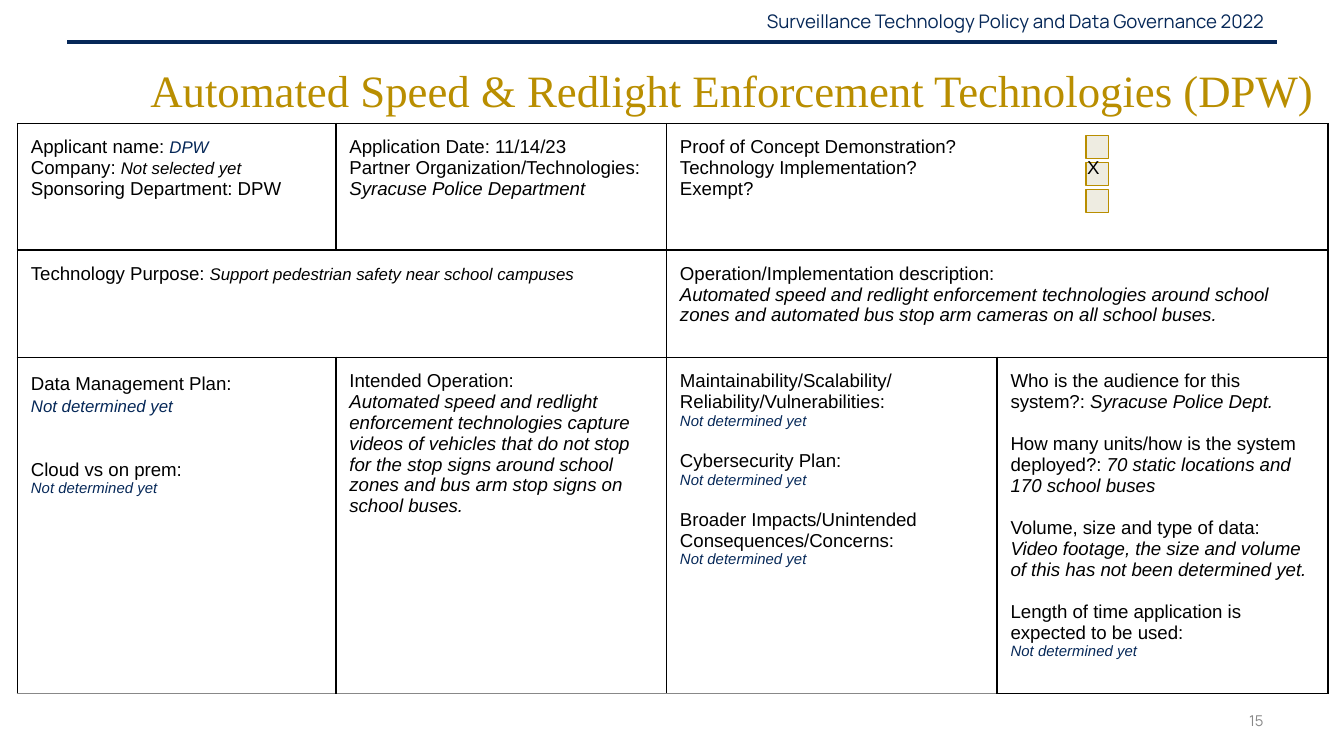
from lxml import etree
from pptx import Presentation
from pptx.dml.color import RGBColor
from pptx.enum.shapes import MSO_CONNECTOR, MSO_SHAPE
from pptx.enum.text import MSO_ANCHOR, PP_ALIGN
from pptx.oxml.ns import qn
from pptx.util import Inches, Pt

LINE = MSO_CONNECTOR.STRAIGHT
RECTANGLE = MSO_SHAPE.RECTANGLE
MIDDLE = MSO_ANCHOR.MIDDLE
RIGHT = PP_ALIGN.RIGHT

COLORS = {
    "navy": "062858",
    "gold": "B98E00",
    "cream": "EEECE1",
    "gray": "888888",
    "black": "000000",
}

# Text styles: size, colour, italic
LABEL = (10, "black", False)
ANSWER = (10, "black", True)
SMALL_ANSWER = (9, "black", True)
NAVY_ANSWER = (9, "navy", True)
PENDING = (8, "navy", True)
GAP = 11.4  # points between two questions in one cell
TAB_STOP = 3.03  # inches from the cell text to the check mark


def para(*runs, before=0, spacing=None):
    return {"runs": runs, "before": before, "spacing": spacing}


def question(label, answer, style=PENDING, before=0):
    return [para((label, LABEL), before=before), para((answer, style))]


NOT_YET = "Not determined yet"

# (row, column, columns spanned, paragraphs)
CELLS = [
    (0, 0, 1, [
        para(("Applicant name: ", LABEL), ("DPW", NAVY_ANSWER)),
        para(("Company: ", LABEL), ("Not selected yet", SMALL_ANSWER)),
        para(("Sponsoring Department: DPW", LABEL)),
    ]),
    (0, 1, 1, [
        para(("Application Date: 11/14/23", LABEL)),
        *question("Partner Organization/Technologies:", "Syracuse Police Department", ANSWER),
    ]),
    (0, 2, 2, [
        para(("Proof of Concept Demonstration?", LABEL)),
        para(("Technology Implementation?\tX", LABEL)),
        para(("Exempt?", LABEL)),
    ]),
    (1, 0, 2, [
        para(("Technology Purpose: ", LABEL),
             ("Support pedestrian safety near school campuses", SMALL_ANSWER)),
    ]),
    (1, 2, 2, question(
        "Operation/Implementation description:",
        "Automated speed and redlight enforcement technologies around school "
        "zones and automated bus stop arm cameras on all school buses.", ANSWER)),
    (2, 0, 1, [
        para(("Data Management Plan:", LABEL), spacing=1.15),
        para((NOT_YET, NAVY_ANSWER), spacing=1.15),
        *question("Cloud vs on prem:", NOT_YET, before=23),
    ]),
    (2, 1, 1, question(
        "Intended Operation:",
        "Automated speed and redlight enforcement technologies capture videos of "
        "vehicles that do not stop for the stop signs around school zones and bus "
        "arm stop signs on school buses.", ANSWER)),
    (2, 2, 1, [
        *question("Maintainability/Scalability/Reliability/Vulnerabilities:", NOT_YET),
        *question("Cybersecurity Plan:", NOT_YET, before=GAP),
        *question("Broader Impacts/Unintended Consequences/Concerns:", NOT_YET, before=GAP),
    ]),
    (2, 3, 1, [
        para(("Who is the audience for this system?: ", LABEL),
             ("Syracuse Police Dept.", ANSWER)),
        para(("How many units/how is the system deployed?: ", LABEL),
             ("70 static locations and 170 school buses", ANSWER), before=GAP),
        *question("Volume, size and type of data:",
                  "Video footage, the size and volume of this has not been "
                  "determined yet.", ANSWER, before=GAP),
        *question("Length of time application is expected to be used:", NOT_YET, before=GAP),
    ]),
]


def rgb(name):
    return RGBColor.from_string(COLORS[name])


def add_right_text(slide, text, left, top, width, height, font, size, color):
    frame = slide.shapes.add_textbox(
        Inches(left), Inches(top), Inches(width), Inches(height)).text_frame
    frame.word_wrap = True
    frame.vertical_anchor = MIDDLE
    line = frame.paragraphs[0]
    line.text = text
    line.alignment = RIGHT
    line.font.name = font
    line.font.size = Pt(size)
    line.font.color.rgb = rgb(color)


def add_page_frame(slide, left, top, width):
    """Running header, its rule and the page number."""
    right = left + width
    add_right_text(slide, "Surveillance Technology Policy and Data Governance 2022",
                   right - 4.29, top, 4.29, 0.3, "Manrope", 10, "navy")
    add_right_text(slide, "15", right - 2.33, top + 5.2, 2.33, 0.3, "Manrope", 8, "gray")
    rule = slide.shapes.add_connector(
        LINE, Inches(left), Inches(top + 0.3), Inches(right), Inches(top + 0.3))
    rule.line.color.rgb = rgb("navy")
    rule.line.width = Pt(2.25)
    etree.SubElement(rule._element.spPr, qn("a:effectLst"))


def set_borders(cell, bottom):
    properties = cell._tc.get_or_add_tcPr()
    sides = {"L": "black", "R": "black", "T": "black", "B": bottom}
    for index, (side, color) in enumerate(sides.items()):
        border = etree.Element(qn(f"a:ln{side}"), w=str(Pt(1 if color == "black" else 0.75)))
        fill = etree.SubElement(border, qn("a:solidFill"))
        etree.SubElement(fill, qn("a:srgbClr"), val=COLORS[color])
        properties.insert(index, border)


def add_tab_stop(paragraph):
    stops = etree.SubElement(paragraph._p.get_or_add_pPr(), qn("a:tabLst"))
    etree.SubElement(stops, qn("a:tab"), pos=str(Inches(TAB_STOP)), algn="l")


def fill_cell(cell, paragraphs):
    frame = cell.text_frame
    for index, content in enumerate(paragraphs):
        paragraph = frame.add_paragraph() if index else frame.paragraphs[0]
        paragraph.space_before = Pt(content["before"])
        if content["spacing"]:
            paragraph.line_spacing = content["spacing"]
        for text, (size, color, italic) in content["runs"]:
            if "\t" in text:
                add_tab_stop(paragraph)
            run = paragraph.add_run()
            run.text = text
            run.font.name = "Arial"
            run.font.size = Pt(size)
            run.font.italic = italic
            run.font.color.rgb = rgb(color)


def add_application_table(slide, left, top, columns, rows):
    table = slide.shapes.add_table(
        len(rows), len(columns), Inches(left), Inches(top),
        Inches(sum(columns)), Inches(sum(rows))).table
    table.first_row = table.horz_banding = False
    for column, width in zip(table.columns, columns):
        column.width = Inches(width)
    for row, height in zip(table.rows, rows):
        row.height = Inches(height)

    last_row, last_column = len(rows) - 1, len(columns) - 1
    for r in range(len(rows)):
        for c in range(len(columns)):
            cell = table.cell(r, c)
            cell.fill.background()
            cell.margin_left = cell.margin_right = Inches(0.1)
            cell.margin_top = cell.margin_bottom = Inches(0.1)
            set_borders(cell, "gray" if r == last_row and c < last_column else "black")

    for r, c, span, paragraphs in CELLS:
        cell = table.cell(r, c)
        if span > 1:
            cell.merge(table.cell(r, c + span - 1))
        fill_cell(cell, paragraphs)


def add_checkboxes(slide, left, top, size, pitch, count):
    for index in range(count):
        box = slide.shapes.add_shape(
            RECTANGLE, Inches(left), Inches(top + index * pitch), Inches(size), Inches(size))
        box.shadow.inherit = False
        box.fill.solid()
        box.fill.fore_color.rgb = rgb("cream")
        box.line.color.rgb = rgb("gold")
        box.line.width = Pt(0.75)


def main():
    deck = Presentation()
    deck.slide_width = Inches(10)
    deck.slide_height = deck.slide_width * 9 // 16
    slide = deck.slides.add_slide(deck.slide_layouts[6])
    add_page_frame(slide, 0.5, 0.01, 9)
    add_right_text(slide, "Automated Speed & Redlight Enforcement Technologies (DPW)",
                   0.2, 0.3, 9.67, 0.74, "Times New Roman", 24, "gold")
    # Boxes lie under the table so the check mark shows on top
    add_checkboxes(slide, 8.08, 1.01, 0.17, 0.2, 3)
    add_application_table(slide, 0.13, 0.92, [2.37, 2.46, 2.46, 2.46], [0.94, 0.8, 2.5])
    deck.save("out.pptx")


if __name__ == "__main__":
    main()
